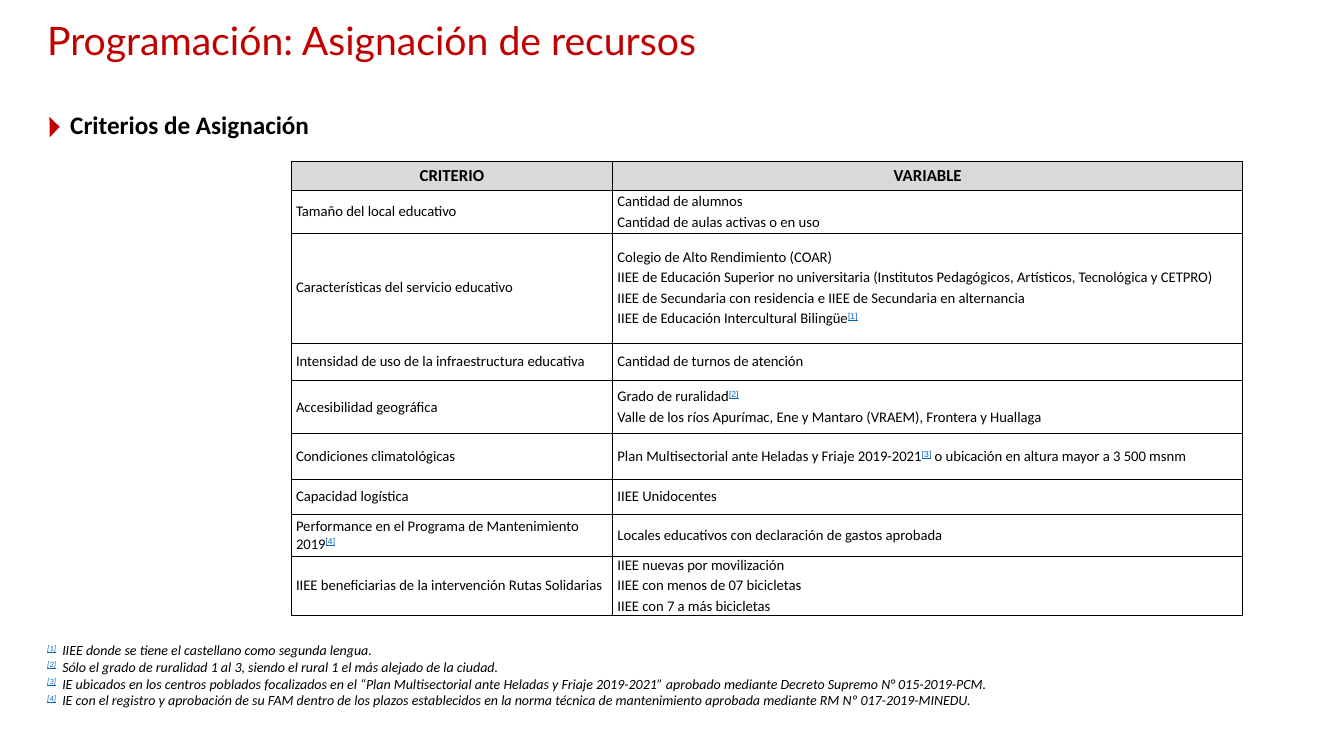
from pptx import Presentation
from pptx.dml.color import RGBColor
from pptx.enum.shapes import MSO_SHAPE
from pptx.enum.text import MSO_ANCHOR, PP_ALIGN
from pptx.oxml.ns import qn
from pptx.util import Cm, Pt
from lxml import etree

LEFT, MID, JUST = PP_ALIGN.LEFT, PP_ALIGN.CENTER, PP_ALIGN.JUSTIFY
BASE, CORE = MSO_ANCHOR.BOTTOM, MSO_ANCHOR.MIDDLE
TOP = MSO_ANCHOR.TOP
WEDGE = MSO_SHAPE.RIGHT_TRIANGLE

# Text between bars is a raised footnote mark
ROWS = [
    (0.74, ["CRITERIO"], ["VARIABLE"]),
    (1.07, ["Tamaño del local educativo"],
     ["Cantidad de alumnos", "Cantidad de aulas activas o en uso"]),
    (2.77, ["Características del servicio educativo"],
     ["Colegio de Alto Rendimiento (COAR)",
      "IIEE de Educación Superior no universitaria (Institutos Pedagógicos, "
      "Artísticos, Tecnológica y CETPRO)",
      "IIEE de Secundaria con residencia e IIEE de Secundaria en alternancia",
      "IIEE de Educación Intercultural Bilingüe|[1]|"]),
    (0.94, ["Intensidad de uso de la infraestructura educativa"],
     ["Cantidad de turnos de atención"]),
    (1.35, ["Accesibilidad geográfica"],
     ["Grado de ruralidad|[2]|",
      "Valle de los ríos Apurímac, Ene y Mantaro (VRAEM), Frontera y Huallaga"]),
    (1.16, ["Condiciones climatológicas"],
     ["Plan Multisectorial ante Heladas y Friaje 2019-2021|[3]| "
      "o ubicación en altura mayor a 3 500 msnm"]),
    (0.86, ["Capacidad logística"], ["IIEE Unidocentes"]),
    (1.07, ["Performance en el Programa de Mantenimiento 2019|[4]|"],
     ["Locales educativos con declaración de gastos aprobada"]),
    (1.46, ["IIEE beneficiarias de la intervención Rutas Solidarias"],
     ["IIEE nuevas por movilización", "IIEE con menos de 07 bicicletas",
      "IIEE con 7 a más bicicletas"]),
]
NOTES = [
    "IIEE donde se tiene el castellano como segunda lengua.",
    "Sólo el grado de ruralidad 1 al 3, siendo el rural 1 el más alejado de la ciudad.",
    "IE ubicados en los centros poblados focalizados en el “Plan Multisectorial ante "
    "Heladas y Friaje 2019-2021” aprobado mediante Decreto Supremo N° 015-2019-PCM.",
    "IE con el registro y aprobación de su FAM dentro de los plazos establecidos en la "
    "norma técnica de mantenimiento aprobada mediante RM Nº 017-2019-MINEDU.",
]


class Deck:
    hues = {"red": "C00000", "ink": "000000", "head": "D9D9D9", "link": "0563C1"}

    def __init__(self):
        self.file = Presentation()
        self.file.slide_width, self.file.slide_height = Cm(33.87), Cm(19.05)
        self.slide = self.file.slides.add_slide(self.file.slide_layouts[6])

    def hue(self, name):
        return RGBColor.from_string(self.hues[name])

    def lines(self, frame, lines, form, align=LEFT, gap=0, lead=None, tab=None,
              mark="Calibri"):
        for i, line in enumerate(lines):
            para = frame.paragraphs[0] if i == 0 else frame.add_paragraph()
            para.alignment = align
            para.space_before, para.space_after = Pt(gap if i else 0), Pt(gap)
            if lead:
                para.line_spacing = lead
            if tab:
                stops = etree.SubElement(para._p.get_or_add_pPr(), qn("a:tabLst"))
                etree.SubElement(stops, qn("a:tab"), pos=str(Cm(tab)), algn="l")
            for j, part in enumerate(line.split("|")):
                if part:
                    self.piece(para, part, form, mark if j % 2 else None)

    def piece(self, para, text, form, mark):
        run = para.add_run()
        run.text = text
        style = {"name": "Calibri", "hue": "ink", **form}
        if mark:
            style.update(name=mark, hue="link", underline=True)
            run._r.get_or_add_rPr().set("baseline", "30000")
        run.font.color.rgb = self.hue(style.pop("hue"))
        for key, value in style.items():
            setattr(run.font, key, value)

    def text(self, place, lines, form, anchor=TOP, **rest):
        frame = self.slide.shapes.add_textbox(*map(Cm, place)).text_frame
        frame.word_wrap = True
        frame.vertical_anchor = anchor
        self.lines(frame, lines, form, **rest)

    def shape(self, kind, place, hue, turn):
        shape = self.slide.shapes.add_shape(kind, *map(Cm, place))
        shape.shadow.inherit = False
        shape.rotation = turn
        shape.fill.solid()
        shape.fill.fore_color.rgb = self.hue(hue)
        shape.line.fill.background()

    def edge(self, cell):
        props = cell._tc.get_or_add_tcPr()
        for side in "LRTB":
            line = etree.SubElement(props, qn("a:ln" + side), w=str(Pt(0.5)))
            fill = etree.SubElement(line, qn("a:solidFill"))
            etree.SubElement(fill, qn("a:srgbClr"), val=self.hues["ink"])

    def table(self, left, top, cols, rows):
        high = sum(row[0] for row in rows)
        table = self.slide.shapes.add_table(
            len(rows), len(cols), Cm(left), Cm(top), Cm(sum(cols)), Cm(high)).table
        table.first_row = table.horz_banding = False
        for col, wide in zip(table.columns, cols):
            col.width = Cm(wide)
        trim = {"margin_left": Cm(0.12), "margin_right": Cm(0.12),
                "margin_top": 0, "margin_bottom": 0, "vertical_anchor": CORE}
        for i, (tall, *texts) in enumerate(rows):
            table.rows[i].height = Cm(tall)
            for j, lines in enumerate(texts):
                cell = table.cell(i, j)
                for key, value in trim.items():
                    setattr(cell, key, value)
                self.edge(cell)
                if i == 0:
                    cell.fill.solid()
                    cell.fill.fore_color.rgb = self.hue("head")
                    self.lines(cell.text_frame, lines,
                               {"size": Pt(12), "bold": True}, MID)
                else:
                    cell.fill.background()
                    self.lines(cell.text_frame, lines,
                               {"size": Pt(10.5), "bold": False},
                               JUST if j else LEFT, gap=1, mark="Arial")


def main():
    deck = Deck()
    # Title and heading
    deck.text((0.94, 0.38, 25.4, 1.35), ["Programación: Asignación de recursos"],
              {"name": "Lato", "size": Pt(28), "hue": "red"}, BASE, lead=0.9)
    deck.text((1.52, 2.64, 15.42, 1.02), ["Criterios de Asignación"],
              {"size": Pt(18), "bold": True}, align=JUST)
    deck.shape(WEDGE, (1.07, 3.02, 0.36, 0.36), "red", 224.1)
    # Criteria
    deck.table(7.34, 4.06, (8.1, 15.88), ROWS)
    # Footnotes
    notes = [f"|[{i}]|\t{note}" for i, note in enumerate(NOTES, 1)]
    deck.text((0.94, 16.03, 32.08, 1.96), notes, {"size": Pt(10), "italic": True},
              CORE, align=JUST, tab=0.38)
    deck.file.save("out.pptx")


if __name__ == "__main__":
    main()
